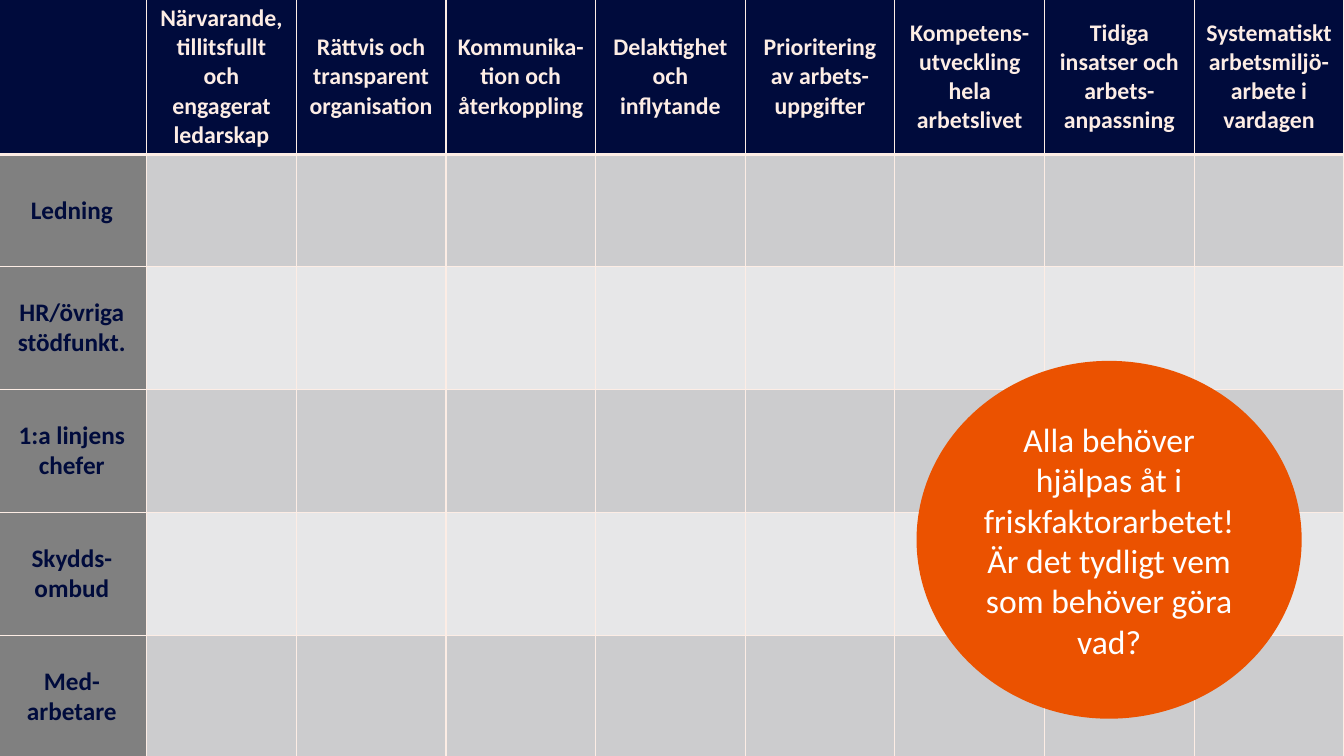
from dataclasses import dataclass

import pptx
import pptx.dml.color
import pptx.enum.shapes
import pptx.enum.text
import pptx.oxml.ns
import pptx.presentation
import pptx.slide
import pptx.table
import pptx.text.text
import pptx.util
from lxml import etree
from pptx.dml.color import RGBColor
from pptx.util import Inches

NAVY = RGBColor(0x00, 0x0B, 0x3C)
CREAM = RGBColor(0xFD, 0xED, 0xE5)
GRAY = RGBColor(0x80, 0x80, 0x80)
DARK_BAND = RGBColor(0xCC, 0xCC, 0xCE)
LIGHT_BAND = RGBColor(0xE7, 0xE7, 0xE8)
ORANGE = RGBColor(0xEB, 0x52, 0x00)
WHITE = RGBColor(0xFF, 0xFF, 0xFF)

FONT = "Calibri"
TABLE_WIDTH = 13.36
ROW_HEIGHTS = [1.53, 1.11, 1.22, 1.22, 1.22, 1.22]
THIN, THICK = 1, 3

HEALTH_FACTORS = [
    ["Närvarande, tillitsfullt och engagerat ledarskap"],
    ["Rättvis och transparent organisation"],
    ["Kommunika-tion och återkoppling"],
    ["Delaktighet", "och inflytande"],
    ["Prioritering av arbets-uppgifter"],
    ["Kompetens-", "utveckling hela arbetslivet"],
    ["Tidiga insatser och arbets-anpassning"],
    ["Systematiskt arbetsmiljö-arbete i vardagen"],
]
ROLES = ["Ledning", "HR/övriga stödfunkt.", "1:a linjens chefer", "Skydds-ombud", "Med-arbetare"]
CALLOUT = ["Alla behöver hjälpas åt i friskfaktorarbetet!", "Är det tydligt vem som behöver göra vad?"]


@dataclass(frozen=True)
class TextStyle:
    size: float
    color: RGBColor
    bold: bool = False


@dataclass(frozen=True)
class CellStyle:
    fill: RGBColor
    top: float = THIN
    bottom: float = THIN


HEADER_TEXT = TextStyle(17, CREAM, True)
ROLE_TEXT = TextStyle(18, NAVY, True)
CALLOUT_TEXT = TextStyle(24, WHITE)


def write_text(frame: pptx.text.text.TextFrame, lines: list[str], style: TextStyle) -> None:
    for index, line in enumerate(lines):
        paragraph = frame.add_paragraph() if index else frame.paragraphs[0]
        paragraph.alignment = pptx.enum.text.PP_ALIGN.CENTER
        run = paragraph.add_run()
        run.text = line
        run.font.name = FONT
        run.font.size = pptx.util.Pt(style.size)
        run.font.bold = style.bold
        run.font.color.rgb = style.color


def style_cell(cell: pptx.table._Cell, style: CellStyle) -> None:
    """Set borders before the fill, as the cell schema orders them."""
    qn = pptx.oxml.ns.qn
    properties = cell._tc.get_or_add_tcPr()
    widths = {"lnL": THIN, "lnR": THIN, "lnT": style.top, "lnB": style.bottom}
    for side, width in widths.items():
        line = etree.SubElement(properties, qn(f"a:{side}"), w=str(pptx.util.Pt(width)))
        fill = etree.SubElement(line, qn("a:solidFill"))
        etree.SubElement(fill, qn("a:srgbClr"), val=str(CREAM))
    cell.fill.solid()
    cell.fill.fore_color.rgb = style.fill
    cell.vertical_anchor = pptx.enum.text.MSO_ANCHOR.MIDDLE


def cell_style(row: int, column: int) -> CellStyle:
    if row == 0:
        return CellStyle(NAVY, bottom=THICK)
    band = DARK_BAND if row % 2 else LIGHT_BAND
    return CellStyle(band if column else GRAY, top=THICK if row == 1 else THIN)


def add_matrix(slide: pptx.slide.Slide) -> None:
    column_count = len(HEALTH_FACTORS) + 1
    table = slide.shapes.add_table(
        len(ROW_HEIGHTS), column_count,
        Inches(-0.03), Inches(-0.01), Inches(TABLE_WIDTH), Inches(sum(ROW_HEIGHTS)),
    ).table
    table.horz_banding = False
    for column in table.columns:
        column.width = Inches(TABLE_WIDTH / column_count)
    for row_index, height in enumerate(ROW_HEIGHTS):
        table.rows[row_index].height = Inches(height)
        for column_index in range(column_count):
            style_cell(table.cell(row_index, column_index), cell_style(row_index, column_index))
    for column_index, lines in enumerate(HEALTH_FACTORS, start=1):
        write_text(table.cell(0, column_index).text_frame, lines, HEADER_TEXT)
    for row_index, role in enumerate(ROLES, start=1):
        write_text(table.cell(row_index, 0).text_frame, [role], ROLE_TEXT)


def add_callout(slide: pptx.slide.Slide) -> None:
    shape = slide.shapes.add_shape(
        pptx.enum.shapes.MSO_SHAPE.OVAL,
        Inches(9.09), Inches(3.58), Inches(3.82), Inches(3.55),
    )
    shape.shadow.inherit = False
    shape.fill.solid()
    shape.fill.fore_color.rgb = ORANGE
    shape.line.fill.background()
    shape.text_frame.word_wrap = True
    shape.text_frame.vertical_anchor = pptx.enum.text.MSO_ANCHOR.MIDDLE
    write_text(shape.text_frame, CALLOUT, CALLOUT_TEXT)


def main() -> None:
    presentation = pptx.Presentation()
    presentation.slide_width = Inches(13.33)
    presentation.slide_height = Inches(7.5)
    slide = presentation.slides.add_slide(presentation.slide_layouts.get_by_name("Blank"))
    add_matrix(slide)
    add_callout(slide)
    presentation.save("out.pptx")


if __name__ == "__main__":
    main()
